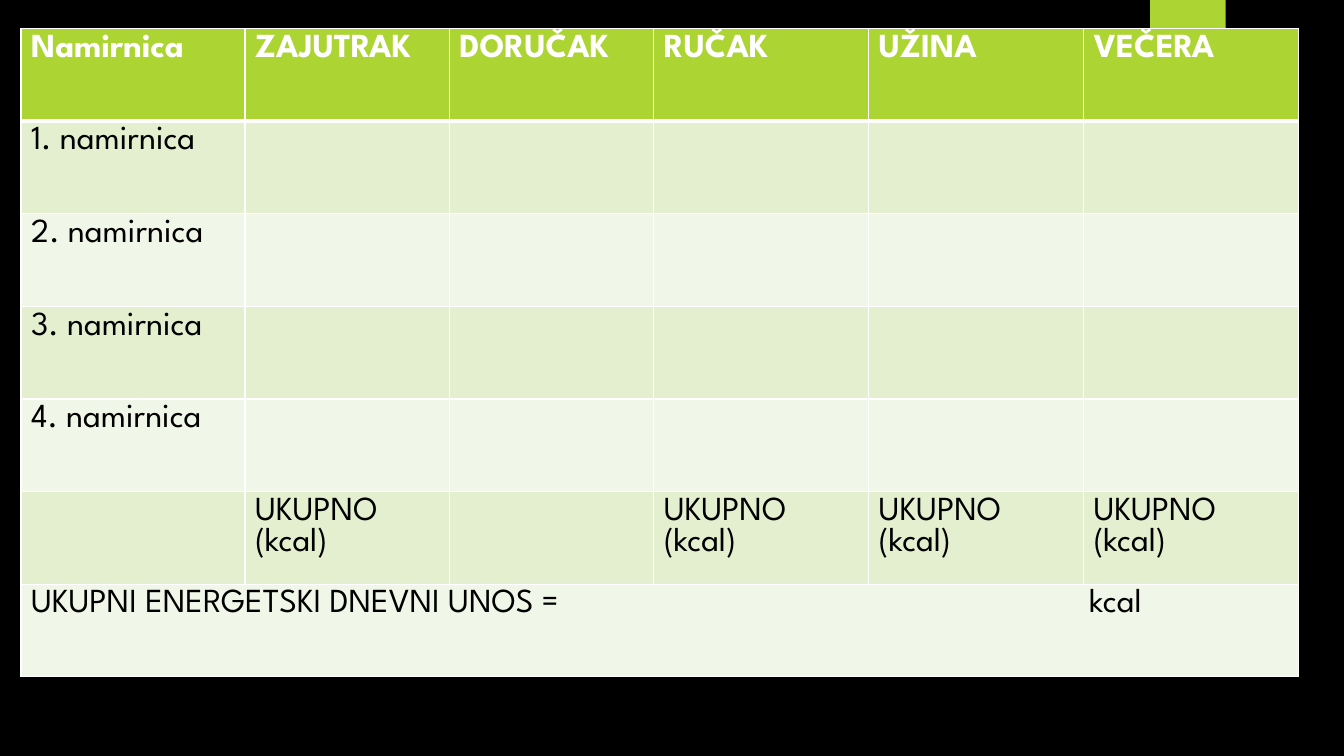
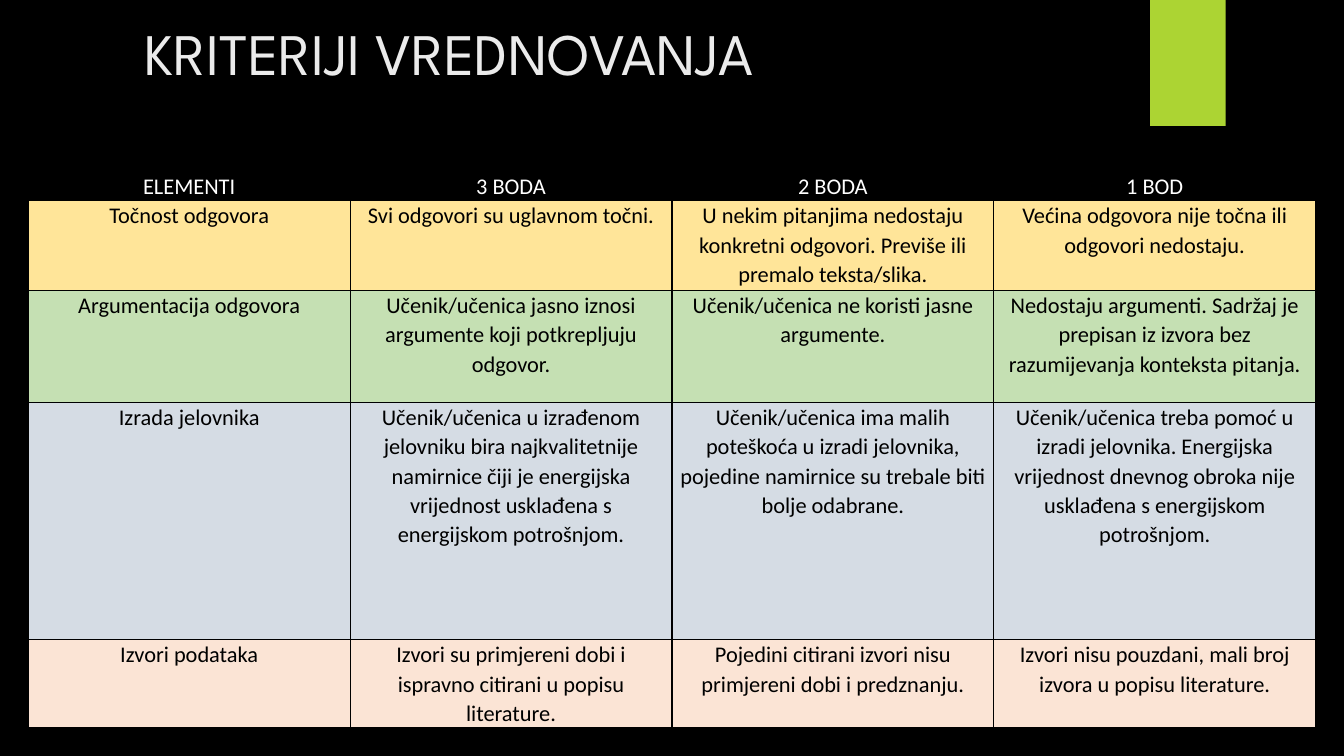
from dataclasses import dataclass

import pptx
import pptx.dml.color
import pptx.enum.shapes
import pptx.enum.text
import pptx.oxml
import pptx.oxml.ns
import pptx.slide
import pptx.table
import pptx.util
from pptx.util import Pt

ALIGN = pptx.enum.text.PP_ALIGN


@dataclass(frozen=True)
class Theme:
    background: str = "000000"
    accent: str = "ACD433"
    band_dark: str = "E3EFCE"
    band_light: str = "F1F7E8"
    title: str = "EBEBEB"
    white: str = "FFFFFF"
    black: str = "000000"
    display_font: str = "League Spartan"
    table_font: str = "Calibri"
    title_size: float = 42
    menu_size: float = 24
    criteria_size: float = 16


@dataclass(frozen=True)
class Row:
    cells: tuple[str, ...]
    height: float
    fill: str | None
    color: str = "000000"
    bold: bool = False
    bottom_border: float = 1


@dataclass(frozen=True)
class TableStyle:
    font: str
    size: float
    border: str
    align: ALIGN = ALIGN.LEFT
    line_spacing: float = 1.0
    margin_x: float = 7.2
    margin_y: float = 3.6


T = Theme()

MENU_STYLE = TableStyle(T.display_font, T.menu_size, T.white)
CRITERIA_STYLE = TableStyle(T.table_font, T.criteria_size, T.black, ALIGN.CENTER, 1.07, 5, 0)

MENU_WIDTHS = (160, 146, 146, 153.5, 153.5, 153.5)
MENU_ROW_HEIGHT = 66.14
KCAL_TAB = 756
TOTAL = "UKUPNO\n(kcal)"
MENU_BODY = [(f"{n}. namirnica",) for n in range(1, 5)] + [
    ("", TOTAL, "", TOTAL, TOTAL, TOTAL),
    ("UKUPNI ENERGETSKI DNEVNI UNOS =\tkcal",),
]
MENU_ROWS = [
    Row(("Namirnica", "ZAJUTRAK", "DORUČAK", "RUČAK", "UŽINA", "VEČERA"),
        MENU_ROW_HEIGHT, T.accent, T.white, True, 3),
    *(Row(cells, MENU_ROW_HEIGHT, T.band_light if i % 2 else T.band_dark)
      for i, cells in enumerate(MENU_BODY)),
]

CRITERIA_WIDTHS = (229.9,) * 4
CRITERIA_ROWS = [
    Row(("ELEMENTI", "3 BODA", "2 BODA", "1 BOD"), 20.5, None, T.white),
    Row(("Točnost odgovora",
         "Svi odgovori su uglavnom točni.",
         "U nekim pitanjima nedostaju konkretni odgovori. Previše ili premalo teksta/slika.",
         "Većina odgovora nije točna ili odgovori nedostaju."), 64, "FFE599"),
    Row(("Argumentacija odgovora",
         "Učenik/učenica jasno iznosi argumente koji potkrepljuju odgovor.",
         "Učenik/učenica ne koristi jasne argumente.",
         "Nedostaju argumenti. Sadržaj je prepisan iz izvora bez razumijevanja "
         "konteksta pitanja."), 80, "C5E0B3"),
    Row(("Izrada jelovnika",
         "Učenik/učenica u izrađenom jelovniku bira najkvalitetnije namirnice čiji je "
         "energijska vrijednost usklađena s energijskom potrošnjom.",
         "Učenik/učenica ima malih poteškoća u izradi jelovnika, pojedine namirnice su "
         "trebale biti bolje odabrane.",
         "Učenik/učenica treba pomoć u izradi jelovnika. Energijska vrijednost dnevnog "
         "obroka nije usklađena s energijskom potrošnjom."), 169.5, "D5DCE4"),
    Row(("Izvori podataka",
         "Izvori su primjereni dobi i ispravno citirani u popisu literature.",
         "Pojedini citirani izvori nisu primjereni dobi i predznanju.",
         "Izvori nisu pouzdani, mali broj izvora u popisu literature."), 63, "FBE4D5"),
]


def rgb(color: str) -> pptx.dml.color.RGBColor:
    return pptx.dml.color.RGBColor.from_string(color)


def add_run(p, text: str, font: str, size: float, color: str, bold: bool = False) -> None:
    r = p.add_run()
    r.text = text
    r.font.name = font
    r.font.size = Pt(size)
    r.font.bold = bold
    r.font.color.rgb = rgb(color)


def add_base_slide(prs, layout: int) -> pptx.slide.Slide:
    """Add a slide with the green tab at its top edge."""
    s = prs.slides.add_slide(prs.slide_layouts[layout])
    sp = s.shapes.add_shape(pptx.enum.shapes.MSO_SHAPE.RECTANGLE,
                            Pt(821.5), 0, Pt(54), Pt(90))
    sp.shadow.inherit = False
    sp.fill.solid()
    sp.fill.fore_color.rgb = rgb(T.accent)
    sp.line.fill.background()
    return s


def set_title(s: pptx.slide.Slide, text: str) -> None:
    sp = s.shapes.title
    sp.left, sp.top, sp.width, sp.height = Pt(96), Pt(8), Pt(767.5), Pt(102)
    tf = sp.text_frame
    tf.word_wrap = True
    tf.auto_size = pptx.enum.text.MSO_AUTO_SIZE.NONE
    tf.vertical_anchor = pptx.enum.text.MSO_ANCHOR.TOP
    p = tf.paragraphs[0]
    p.alignment = ALIGN.LEFT
    add_run(p, text, T.display_font, T.title_size, T.title)


def set_borders(cell, color: str, bottom: float, top: float) -> None:
    tc_pr = cell._tc.get_or_add_tcPr()
    for side, width in (("L", 1), ("R", 1), ("T", top), ("B", bottom)):
        tc_pr.append(pptx.oxml.parse_xml(
            f'<a:ln{side} {pptx.oxml.ns.nsdecls("a")} w="{Pt(width)}">'
            f'<a:solidFill><a:srgbClr val="{color}"/></a:solidFill></a:ln{side}>'))


def add_tab_stop(p, position: float) -> None:
    p._p.get_or_add_pPr().append(pptx.oxml.parse_xml(
        f'<a:tabLst {pptx.oxml.ns.nsdecls("a")}>'
        f'<a:tab pos="{Pt(position)}" algn="l"/></a:tabLst>'))


def fill_cell(cell, text: str, row: Row, style: TableStyle, top_border: float) -> None:
    cell.margin_left = cell.margin_right = Pt(style.margin_x)
    cell.margin_top = cell.margin_bottom = Pt(style.margin_y)
    set_borders(cell, style.border, row.bottom_border, top_border)
    if row.fill:
        cell.fill.solid()
        cell.fill.fore_color.rgb = rgb(row.fill)
    else:
        cell.fill.background()
    if not text:
        return
    tf = cell.text_frame
    for i, line in enumerate(text.split("\n")):
        p = tf.add_paragraph() if i else tf.paragraphs[0]
        p.alignment = style.align
        p.line_spacing = style.line_spacing
        if "\t" in line:
            add_tab_stop(p, KCAL_TAB)
        add_run(p, line, style.font, style.size, row.color, row.bold)


def add_table(s: pptx.slide.Slide, left: float, top: float, widths: tuple[float, ...],
              rows: list[Row], style: TableStyle, merge_last: bool = False) -> None:
    table: pptx.table.Table = s.shapes.add_table(
        len(rows), len(widths), Pt(left), Pt(top),
        Pt(sum(widths)), Pt(sum(row.height for row in rows))).table
    table.first_row = table.horz_banding = False
    for column, width in zip(table.columns, widths):
        column.width = Pt(width)
    if merge_last:
        last = len(rows) - 1
        table.cell(last, 0).merge(table.cell(last, len(widths) - 1))
    top_border = 1
    for i, row in enumerate(rows):
        table.rows[i].height = Pt(row.height)
        for j in range(len(widths)):
            cell = table.cell(i, j)
            if not cell.is_spanned:
                text = row.cells[j] if j < len(row.cells) else ""
                fill_cell(cell, text, row, style, top_border)
        top_border = row.bottom_border


def main() -> None:
    prs = pptx.Presentation()
    prs.slide_width, prs.slide_height = Pt(960), Pt(540)
    background = prs.slide_master.background.fill
    background.solid()
    background.fore_color.rgb = rgb(T.background)

    s = add_base_slide(prs, 6)
    add_table(s, 15, 20.5, MENU_WIDTHS, MENU_ROWS, MENU_STYLE, merge_last=True)

    s = add_base_slide(prs, 5)
    set_title(s, "KRITERIJI VREDNOVANJA")
    add_table(s, 20.2, 122.4, CRITERIA_WIDTHS, CRITERIA_ROWS, CRITERIA_STYLE)

    prs.save("out.pptx")


if __name__ == "__main__":
    main()
